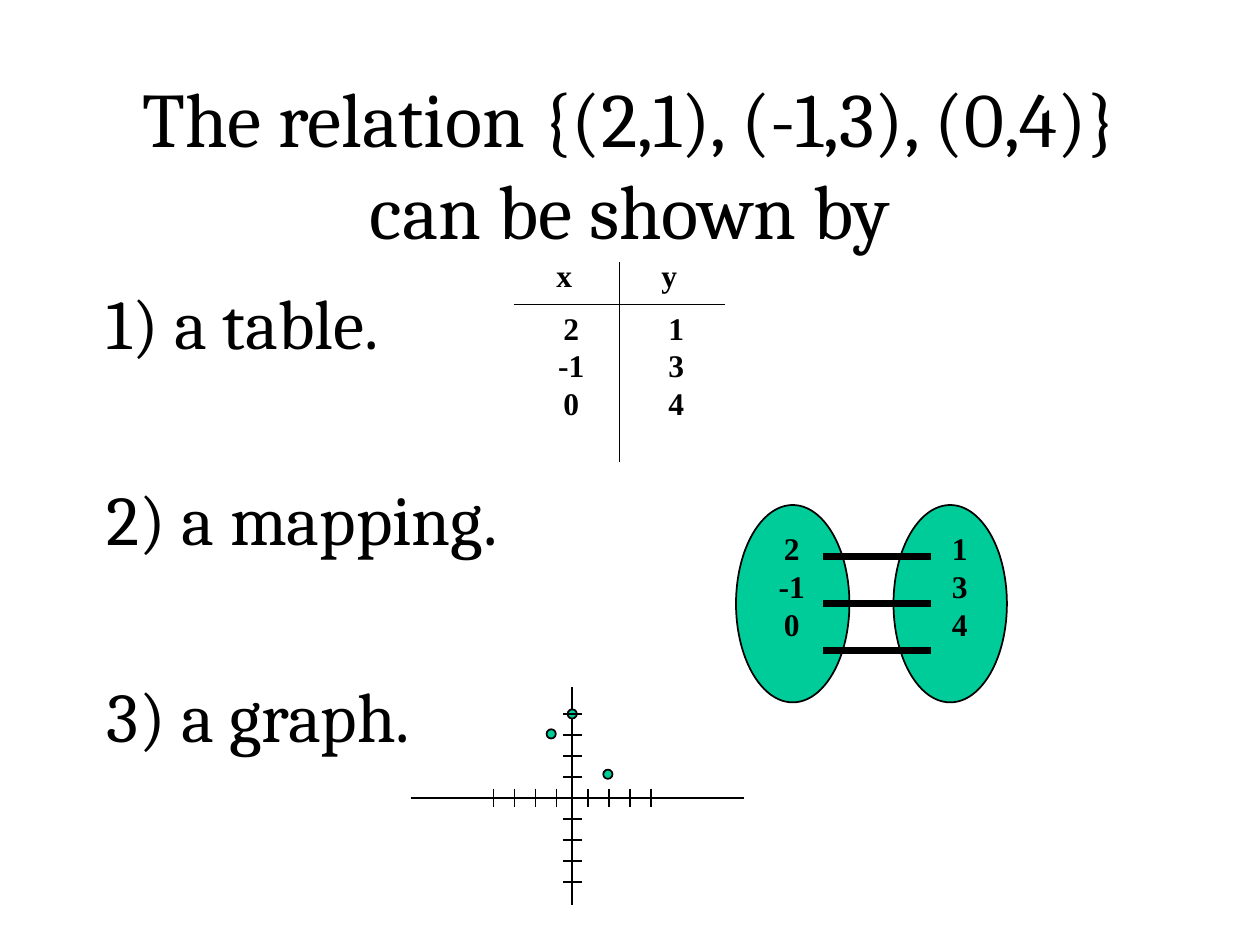
import pptx
import pptx.dml.color
import pptx.enum.shapes
import pptx.enum.text
import pptx.oxml.ns
import pptx.util
from dataclasses import dataclass
from lxml import etree

ALIGN = pptx.enum.text.PP_ALIGN
AUTO_SIZE = pptx.enum.text.MSO_AUTO_SIZE
COLUMNS, ROWS = 60, 45  # square cells, one sixth of an inch
CELL = pptx.util.Inches(10) // COLUMNS


@dataclass
class Theme:
    ink: str = "000000"
    paper: str = "FFFFFF"
    accent: str = "00CC99"
    serif: str = "Cambria"
    label: str = "Times New Roman"
    title_size: int = 44
    body_size: int = 40
    label_size: int = 18
    thin: int = 1
    thick: int = 4


def cells(*values):
    """Turn grid units into slide lengths."""
    return [round(value * CELL) for value in values]


def rgb(value):
    return pptx.dml.color.RGBColor.from_string(value)


class RelationSlide:
    def __init__(self, deck, theme):
        self.theme = theme
        self.page = deck.slides.add_slide(deck.slide_layouts[5])
        self.page.background.fill.solid()
        self.page.background.fill.fore_color.rgb = rgb(theme.paper)

    def format_text(self, frame, font, size, bold=False, align=ALIGN.LEFT, gap=0):
        for index, paragraph in enumerate(frame.paragraphs):
            paragraph.alignment = align
            paragraph.space_before = pptx.util.Pt(gap if index else 0)
            for span in paragraph.runs:
                span.font.name = font
                span.font.size = pptx.util.Pt(size)
                span.font.bold = bold
                span.font.color.rgb = rgb(self.theme.ink)

    def title(self, text, left, top, width, height):
        box = self.page.shapes.title
        box.left, box.top, box.width, box.height = cells(left, top, width, height)
        frame = box.text_frame
        frame.text = text
        frame.word_wrap = True
        frame.auto_size = AUTO_SIZE.NONE
        frame.vertical_anchor = pptx.enum.text.MSO_ANCHOR.MIDDLE
        self.format_text(frame, self.theme.serif, self.theme.title_size, align=ALIGN.CENTER)

    def body(self, lines, left, top, width, height, gap):
        frame = self.page.shapes.add_textbox(*cells(left, top, width, height)).text_frame
        frame.word_wrap = True
        frame.text = "\n".join(lines)
        self.format_text(frame, self.theme.serif, self.theme.body_size, gap=gap)

    def label(self, text, left, top, width, height, wrap=True):
        frame = self.page.shapes.add_textbox(*cells(left, top, width, height)).text_frame
        frame.word_wrap = wrap
        frame.auto_size = AUTO_SIZE.SHAPE_TO_FIT_TEXT
        frame.text = text
        align = ALIGN.CENTER if wrap else ALIGN.LEFT
        self.format_text(frame, self.theme.label, self.theme.label_size, True, align)

    def line(self, x1, y1, x2, y2, weight=None):
        straight = pptx.enum.shapes.MSO_CONNECTOR.STRAIGHT
        line = self.page.shapes.add_connector(straight, *cells(x1, y1, x2, y2))
        line.line.color.rgb = rgb(self.theme.ink)
        line.line.width = pptx.util.Pt(weight or self.theme.thin)
        etree.SubElement(line._element.spPr, pptx.oxml.ns.qn("a:effectLst"))

    def ellipse(self, center_x, center_y, width, height):
        oval = self.page.shapes.add_shape(
            pptx.enum.shapes.MSO_SHAPE.OVAL,
            *cells(center_x - width / 2, center_y - height / 2, width, height))
        oval.shadow.inherit = False
        oval.fill.solid()
        oval.fill.fore_color.rgb = rgb(self.theme.accent)
        oval.line.color.rgb = rgb(self.theme.ink)
        oval.line.width = pptx.util.Pt(self.theme.thin)


def main():
    deck = pptx.Presentation()
    deck.slide_width, deck.slide_height = cells(COLUMNS, ROWS)
    theme = Theme()
    slide = RelationSlide(deck, theme)
    inputs, outputs = "2\n-1\n0", "1\n3\n4"

    # Title and the three ways
    slide.title("The relation {(2,1), (-1,3), (0,4)} can be shown by", 4.5, 4, 51, 7.5)
    slide.body(["1) a table.", "2) a mapping.", "3) a graph."], 4.5, 13, 24.5, 27.5, gap=64.5)

    # Table of x and y
    slide.line(24.5, 14.5, 34.5, 14.5)
    slide.line(29.5, 12.5, 29.5, 22)
    for heading, left in (("x", 25.9), ("y", 30.9)):
        slide.label(heading, left, 11.9, 2.2, 3, wrap=False)
    slide.label(inputs, 25.4, 14.4, 3.6, 7.8)
    slide.label(outputs, 30.9, 14.4, 2.6, 7.8)

    # Mapping between two sets
    for center_x in (37.75, 45.25):
        slide.ellipse(center_x, 28.75, 5.4, 9.4)
    slide.label(inputs, 35.9, 24.9, 3.6, 7.8)
    slide.label(outputs, 44.4, 24.9, 2.6, 7.8)
    for row in range(3):
        y = 26.5 + 2.25 * row
        slide.line(39.2, y, 44.35, y, theme.thick)

    # Graph: axes, points, ticks
    axis_x, axis_y, tick = 27.25, 38, 0.45
    slide.line(axis_x, 32.7, axis_x, 43.1)
    slide.line(19.55, axis_y, 35.45, axis_y)
    for x, y in ((28.95, 36.87), (26.25, 34.95), (axis_x, 34)):
        slide.ellipse(x, y, 0.44, 0.44)
    for step in range(1, 5):
        for x in (axis_x - 0.25 + step, axis_x + 0.25 - step):
            slide.line(x, axis_y - tick, x, axis_y + tick)
        for y in (axis_y - step, axis_y + step):
            slide.line(axis_x - tick, y, axis_x + tick, y)

    deck.save("out.pptx")


if __name__ == "__main__":
    main()
